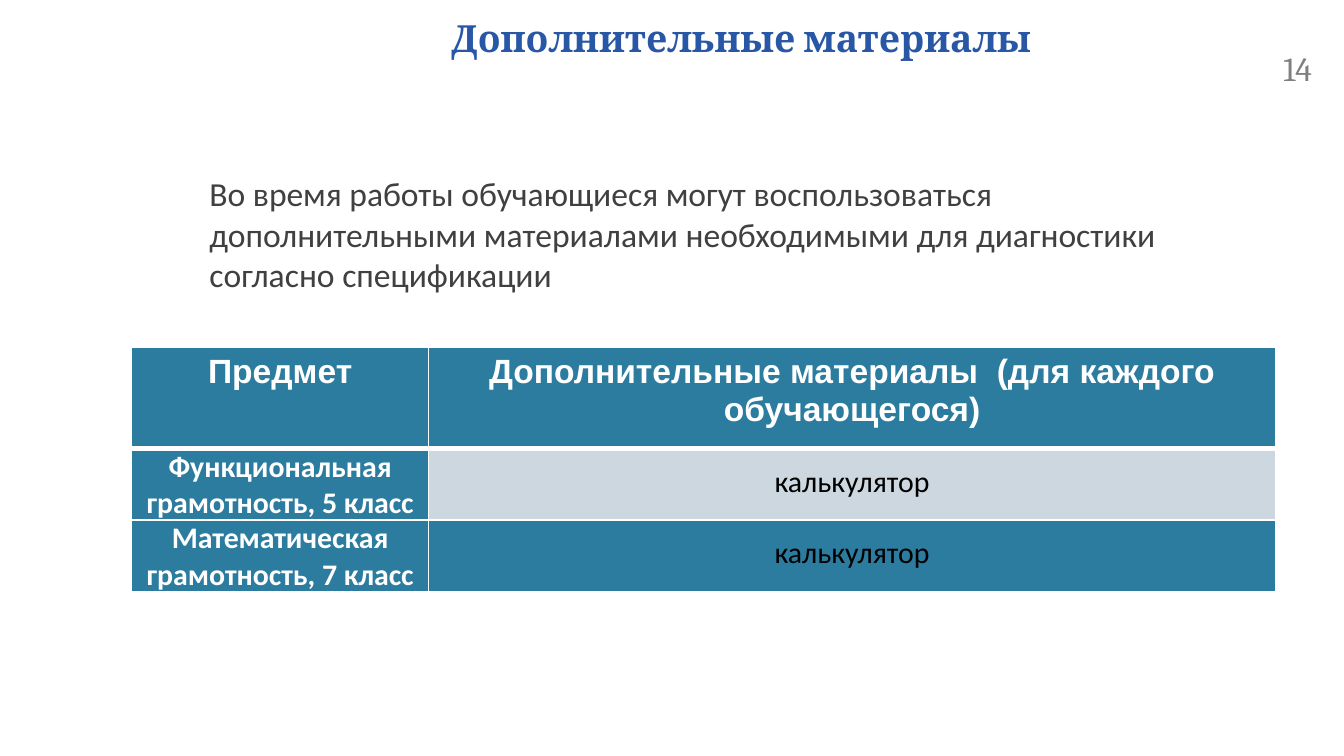
"""Build a slide listing the extra materials allowed for each subject."""
from lxml import etree
from pptx import Presentation, util as u
from pptx.dml.color import RGBColor
from pptx.enum import text
from pptx.oxml import ns


def write(frame, words, font, size, color, bold=False, align=text.PP_ALIGN.CENTER, spacing=None):
    frame.word_wrap = True
    para = frame.paragraphs[0]
    para.alignment = align
    para.line_spacing = spacing
    span = para.add_run()
    span.text = words
    span.font.name = font
    span.font.size = u.Pt(size)
    span.font.bold = bold
    span.font.color.rgb = RGBColor.from_string(color)


def style_cell(cell, fill, bottom_width):
    properties = cell._tc.get_or_add_tcPr()
    for side, width in (("L", 1), ("R", 1), ("T", 1), ("B", bottom_width)):
        line = etree.SubElement(properties, ns.qn(f"a:ln{side}"), w=str(u.Pt(width)))
        solid = etree.SubElement(line, ns.qn("a:solidFill"))
        etree.SubElement(solid, ns.qn("a:srgbClr"), val="FFFFFF")
    cell.fill.solid()
    cell.fill.fore_color.rgb = RGBColor.from_string(fill)


TEAL, GRAY, WHITE, BLACK = "2C7C9F", "CDD7DF", "FFFFFF", "000000"

deck = Presentation()
deck.slide_width, deck.slide_height = u.Inches(10), u.Inches(10 * 9 / 16)
page = deck.slides.add_slide(deck.slide_layouts[5])

title = page.shapes.title
title.left, title.top = u.Inches(2.09), u.Inches(0.13)
title.width, title.height = u.Inches(6.85), u.Inches(0.63)
title.text_frame.auto_size = text.MSO_AUTO_SIZE.NONE
title.text_frame.vertical_anchor = text.MSO_ANCHOR.TOP
write(title.text_frame, "Дополнительные материалы", "Cambria", 20, "2857A5", bold=True, spacing=0.8)

number = page.shapes.add_textbox(u.Inches(9.45), u.Inches(0.31), u.Inches(0.55), u.Inches(0.3))
write(number.text_frame, "14", "Cambria", 18, "808080", align=text.PP_ALIGN.LEFT)

intro = page.shapes.add_textbox(u.Inches(1.46), u.Inches(1.24), u.Inches(7.48), u.Inches(1.02))
write(intro.text_frame,
      "Во время работы обучающиеся могут воспользоваться дополнительными материалами "
      "необходимыми для диагностики согласно спецификации",
      "Calibri", 18, "404040", align=text.PP_ALIGN.LEFT)

header = ("Предмет", "Дополнительные материалы  (для каждого обучающегося)")
grade_5 = ("Функциональная грамотность, 5 класс", "калькулятор")
grade_7 = ("Математическая грамотность, 7 класс", "калькулятор")
tables = (
    (2.58, ((header, 0.76, TEAL, 3), (grade_5, 0.53, GRAY, 1))),
    (3.87, ((grade_7, 0.53, TEAL, 1),)),
)

for top, rows in tables:
    height = sum(row[1] for row in rows)
    grid = page.shapes.add_table(len(rows), 2, u.Inches(0.98), u.Inches(top),
                                 u.Inches(8.51), u.Inches(height)).table
    grid.columns[0].width, grid.columns[1].width = u.Inches(2.21), u.Inches(6.3)
    for row, (labels, row_height, material_fill, bottom_width) in zip(grid.rows, rows):
        row.height = u.Inches(row_height)
        for cell, label, fill in zip(row.cells, labels, (TEAL, material_fill)):
            style_cell(cell, fill, bottom_width)
            if labels is header:
                write(cell.text_frame, label, "Arial", 18, WHITE, bold=True)
                continue
            subject = label == labels[0]
            cell.margin_left = cell.margin_right = u.Inches(0.07)
            cell.margin_top = 0
            cell.margin_bottom = u.Inches(0 if subject else 0.04)
            cell.vertical_anchor = text.MSO_ANCHOR.MIDDLE
            write(cell.text_frame, label, "Calibri", 16, WHITE if subject else BLACK, bold=subject)

deck.save("out.pptx")
